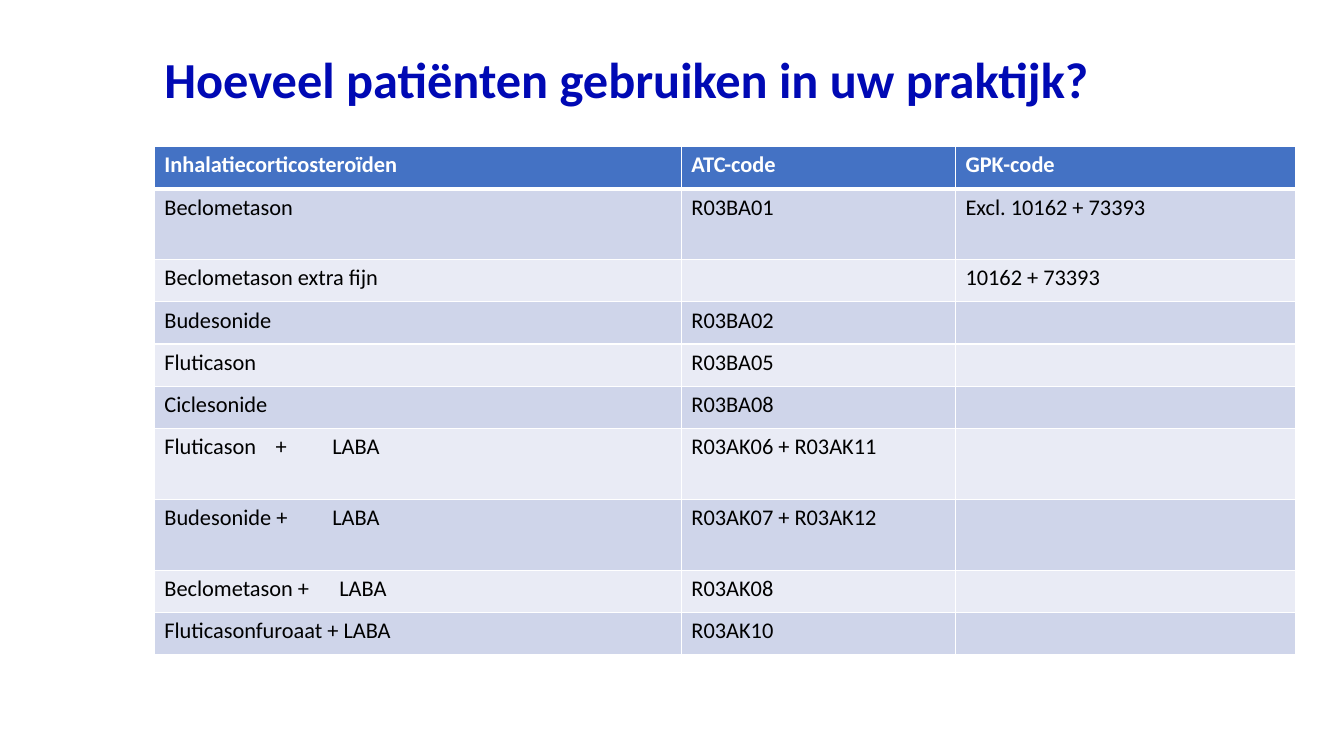
from dataclasses import dataclass

from lxml import etree
from pptx import Presentation
from pptx.dml.color import RGBColor
from pptx.enum import text
from pptx.oxml.ns import qn
from pptx.util import Pt


@dataclass(frozen=True)
class Theme:
    font: str = "Calibri"
    title_size: float = 36
    table_size: float = 16
    title: str = "0009B4"
    header: str = "4472C4"
    bands: tuple[str, str] = ("CFD5EA", "E9EBF5")
    light: str = "FFFFFF"
    dark: str = "000000"
    rule: float = 1
    header_rule: float = 3


@dataclass(frozen=True)
class Row:
    texts: tuple[str, str, str]
    height: float = 30.2
    tabs: tuple[float, ...] = ()


THEME = Theme()
TALL = 50.6
COLUMNS = (376.5, 195.8, 242.7)
TABLE_LEFT, TABLE_TOP = 110.2, 104.6
ROWS = (
    Row(("Inhalatiecorticosteroïden", "ATC-code", "GPK-code")),
    Row(("Beclometason", "R03BA01", "Excl. 10162 + 73393"), TALL),
    Row(("Beclometason extra fijn", "", "10162 + 73393")),
    Row(("Budesonide", "R03BA02", "")),
    Row(("Fluticason", "R03BA05", "")),
    Row(("Ciclesonide", "R03BA08", "")),
    Row(("Fluticason\t+\tLABA", "R03AK06 + R03AK11", ""), TALL, (79.5, 120)),
    Row(("Budesonide +\tLABA", "R03AK07 + R03AK12", ""), TALL, (120,)),
    Row(("Beclometason +\tLABA", "R03AK08", ""), tabs=(125,)),
    Row(("Fluticasonfuroaat + LABA", "R03AK10", "")),
)


def write(p, content: str, size: float, color: str, bold: bool) -> None:
    r = p.add_run()
    r.text = content
    formats = {"name": THEME.font, "size": Pt(size), "bold": bold}
    for name, value in formats.items():
        setattr(r.font, name, value)
    r.font.color.rgb = RGBColor.from_string(color)


def add_tabs(p, stops: tuple[float, ...]) -> None:
    tabs = etree.SubElement(p._p.get_or_add_pPr(), qn("a:tabLst"))
    for stop in stops:
        etree.SubElement(tabs, qn("a:tab"), pos=str(Pt(stop)), algn="l")


def add_borders(cell, top: float, bottom: float) -> None:
    widths = {"L": THEME.rule, "R": THEME.rule, "T": top, "B": bottom}
    tc_pr = cell._tc.get_or_add_tcPr()
    for side, width in widths.items():
        line = etree.SubElement(tc_pr, qn(f"a:ln{side}"), w=str(Pt(width)))
        fill = etree.SubElement(line, qn("a:solidFill"))
        etree.SubElement(fill, qn("a:srgbClr"), val=THEME.light)


def add_title(slide, content: str) -> None:
    sp = slide.shapes.title
    box = {"left": 110.2, "top": 28.8, "width": 828, "height": 59.8}
    for name, value in box.items():
        setattr(sp, name, Pt(value))
    tf = sp.text_frame
    formats = {
        "word_wrap": True,
        "auto_size": text.MSO_AUTO_SIZE.NONE,
        "vertical_anchor": text.MSO_ANCHOR.MIDDLE,
    }
    for name, value in formats.items():
        setattr(tf, name, value)
    p = tf.paragraphs[0]
    p.alignment = text.PP_ALIGN.LEFT
    p.line_spacing = 0.9
    write(p, content, THEME.title_size, THEME.title, True)


def add_medicine_table(slide) -> None:
    table = slide.shapes.add_table(
        len(ROWS), len(COLUMNS), Pt(TABLE_LEFT), Pt(TABLE_TOP),
        Pt(sum(COLUMNS)), Pt(sum(row.height for row in ROWS)),
    ).table
    for column, width in zip(table.columns, COLUMNS):
        column.width = Pt(width)
    for i, row in enumerate(ROWS):
        table.rows[i].height = Pt(row.height)
        header = i == 0
        fill = THEME.header if header else THEME.bands[(i - 1) % 2]
        color = THEME.light if header else THEME.dark
        top = THEME.header_rule if i == 1 else THEME.rule
        bottom = THEME.header_rule if header else THEME.rule
        for j, content in enumerate(row.texts):
            cell = table.cell(i, j)
            add_borders(cell, top, bottom)
            cell.fill.solid()
            cell.fill.fore_color.rgb = RGBColor.from_string(fill)
            p = cell.text_frame.paragraphs[0]
            if "\t" in content:
                add_tabs(p, row.tabs)
            if content:
                write(p, content, THEME.table_size, color, header)


def main() -> None:
    prs = Presentation()
    prs.slide_width, prs.slide_height = Pt(960), Pt(540)
    slide = prs.slides.add_slide(prs.slide_layouts.get_by_name("Title Only"))
    add_title(slide, "Hoeveel patiënten gebruiken in uw praktijk?")
    add_medicine_table(slide)
    prs.save("out.pptx")


if __name__ == "__main__":
    main()
